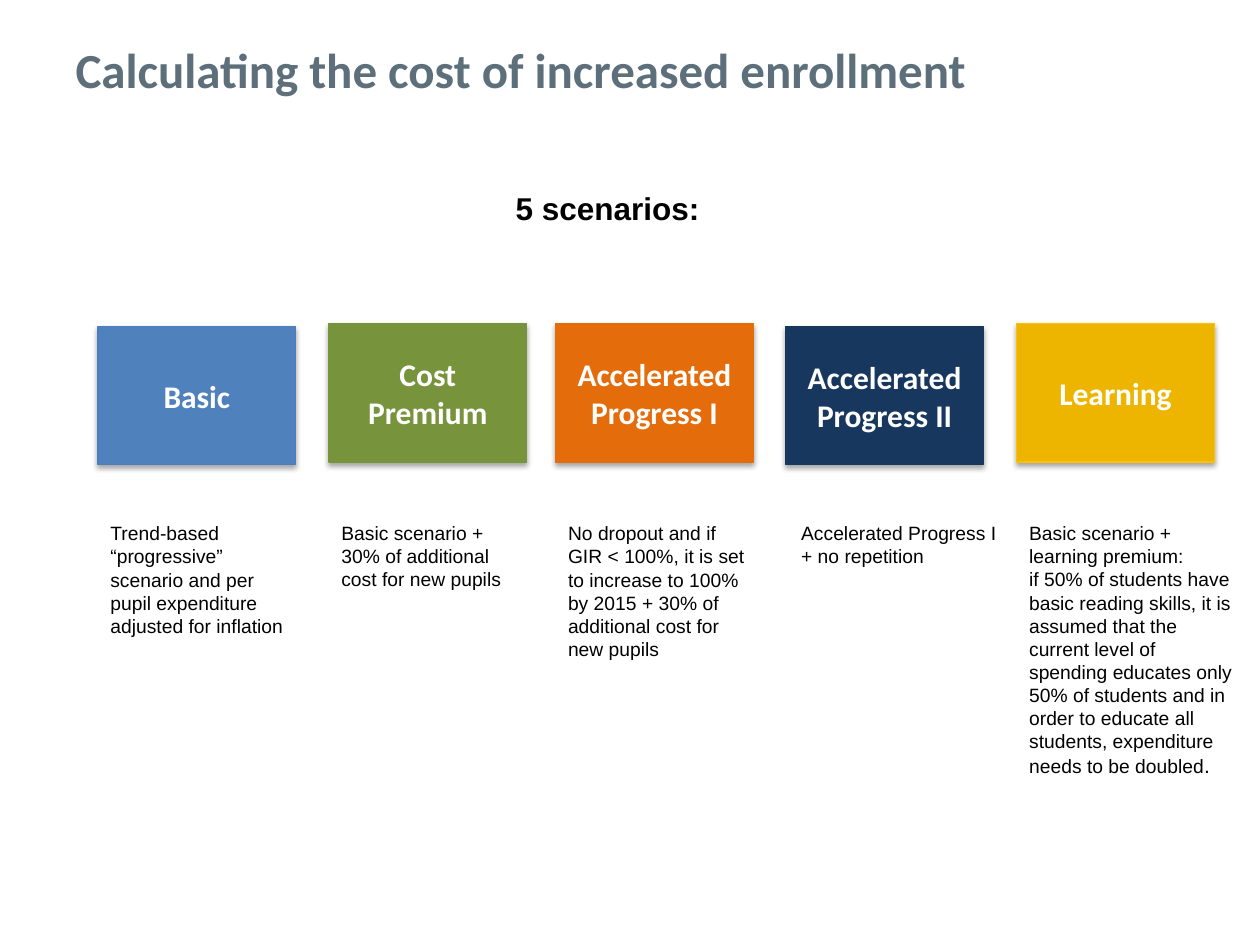
from lxml.etree import SubElement
from pptx import Presentation
from pptx.dml.color import RGBColor
from pptx.enum.shapes import MSO_SHAPE
from pptx.enum.text import MSO_ANCHOR, MSO_AUTO_SIZE, PP_ALIGN
from pptx.oxml.ns import qn
from pptx.util import Pt

BLACK = RGBColor(0x00, 0x00, 0x00)
WHITE = RGBColor(0xFF, 0xFF, 0xFF)
SLATE = RGBColor(0x5C, 0x6F, 0x7A)
BLUE = RGBColor(0x4F, 0x81, 0xBD)
BLUE_EDGE = RGBColor(0x4B, 0x7E, 0xBC)
GREEN = RGBColor(0x77, 0x93, 0x3C)
ORANGE = RGBColor(0xE4, 0x6C, 0x0A)
NAVY = RGBColor(0x17, 0x37, 0x5E)
GOLD = RGBColor(0xEE, 0xB5, 0x00)
GOLD_EDGE = RGBColor(0xFF, 0xC0, 0x00)

TITLE = "Calculating the cost of increased enrollment"
SUBTITLE = "5 scenarios:"
# name, fill, edge, (card left, card top), (description left, width, height),
# description paragraphs, each a list of (text, size)
SCENARIOS = [
    ("Basic", BLUE, BLUE_EDGE, (56, 186.5), (56, 113, 74),
     [[("Trend-based “progressive” scenario and per pupil expenditure "
        "adjusted for inflation", 11)]]),
    ("Cost Premium", GREEN, GREEN, (188, 185), (188, 113, 47.5),
     [[("Basic scenario + 30% of additional cost for new pupils", 11)]]),
    ("Accelerated Progress I", ORANGE, ORANGE, (317.5, 185), (317.5, 121, 101),
     [[("No dropout and if GIR < 100%, it is set to increase to 100% by 2015 "
        "+ 30% of additional cost for new pupils", 11)]]),
    ("Accelerated Progress II", NAVY, NAVY, (449, 186.5), (450.7, 130.3, 34),
     [[("Accelerated Progress I + no repetition", 11)]]),
    ("Learning", GOLD, GOLD_EDGE, (581, 185), (581, 134, 155),
     [[("Basic scenario + learning premium:", 11)],
      [("if 50% of students have basic reading skills, it is assumed that the "
        "current level of spending educates only 50% of students and in order "
        "to educate all students, expenditure needs to be doubled", 11),
       (".", 12)]]),
]
CARD_WIDTH, CARD_HEIGHT = 113, 79
DESCRIPTION_TOP = 294.5

TITLE_FONT = {"name": "Calibri", "size": Pt(28), "bold": True}
SUBTITLE_FONT = {"name": "Arial", "size": Pt(18), "bold": True}
CARD_FONT = {"name": "Calibri", "size": Pt(18), "bold": True}
BODY_FONT = {"name": "Arial"}


def format_font(font, values, color):
    for attribute, value in values.items():
        setattr(font, attribute, value)
    font.color.rgb = color


def fill_text(frame, text, font, color, align):
    frame.text = text
    frame.word_wrap = True
    frame.paragraphs[0].alignment = align
    format_font(frame.paragraphs[0].runs[0].font, font, color)


def add_soft_shadow(shape):
    shape.shadow.inherit = False
    effects = shape._element.spPr.find(qn("a:effectLst"))
    shadow = SubElement(effects, qn("a:outerShdw"), blurRad=str(Pt(3.1)),
                        dist=str(Pt(1.8)), dir="5400000", rotWithShape="0")
    black = SubElement(shadow, qn("a:srgbClr"), val="000000")
    SubElement(black, qn("a:alpha"), val="35000")


def add_card(slide, name, fill, edge, left, top):
    card = slide.shapes.add_shape(MSO_SHAPE.RECTANGLE, Pt(left), Pt(top),
                                  Pt(CARD_WIDTH), Pt(CARD_HEIGHT))
    card.fill.solid()
    card.fill.fore_color.rgb = fill
    card.line.color.rgb = edge
    card.line.width = Pt(0.75)
    add_soft_shadow(card)
    card.text_frame.vertical_anchor = MSO_ANCHOR.MIDDLE
    fill_text(card.text_frame, name, CARD_FONT, WHITE, PP_ALIGN.CENTER)


def add_description(slide, paragraphs, left, width, height):
    box = slide.shapes.add_textbox(Pt(left), Pt(DESCRIPTION_TOP), Pt(width), Pt(height))
    frame = box.text_frame
    frame.word_wrap = True
    for index, pieces in enumerate(paragraphs):
        paragraph = frame.add_paragraph() if index else frame.paragraphs[0]
        for text, size in pieces:
            run = paragraph.add_run()
            run.text = text
            format_font(run.font, BODY_FONT | {"size": Pt(size)}, BLACK)


def main():
    deck = Presentation()
    deck.slide_width, deck.slide_height = Pt(720), Pt(540)
    slide = deck.slides.add_slide(deck.slide_layouts[5])

    title = slide.shapes.title
    title.left, title.top, title.width, title.height = Pt(36), Pt(0), Pt(684), Pt(78.5)
    title.text_frame.auto_size = MSO_AUTO_SIZE.NONE
    title.text_frame.vertical_anchor = MSO_ANCHOR.MIDDLE
    fill_text(title.text_frame, TITLE, TITLE_FONT, SLATE, PP_ALIGN.LEFT)

    subtitle = slide.shapes.add_textbox(Pt(113), Pt(104.5), Pt(468.5), Pt(29))
    fill_text(subtitle.text_frame, SUBTITLE, SUBTITLE_FONT, BLACK, PP_ALIGN.CENTER)

    for name, fill, edge, card_at, description_at, paragraphs in SCENARIOS:
        add_card(slide, name, fill, edge, *card_at)
        add_description(slide, paragraphs, *description_at)

    deck.save("out.pptx")


if __name__ == "__main__":
    main()
